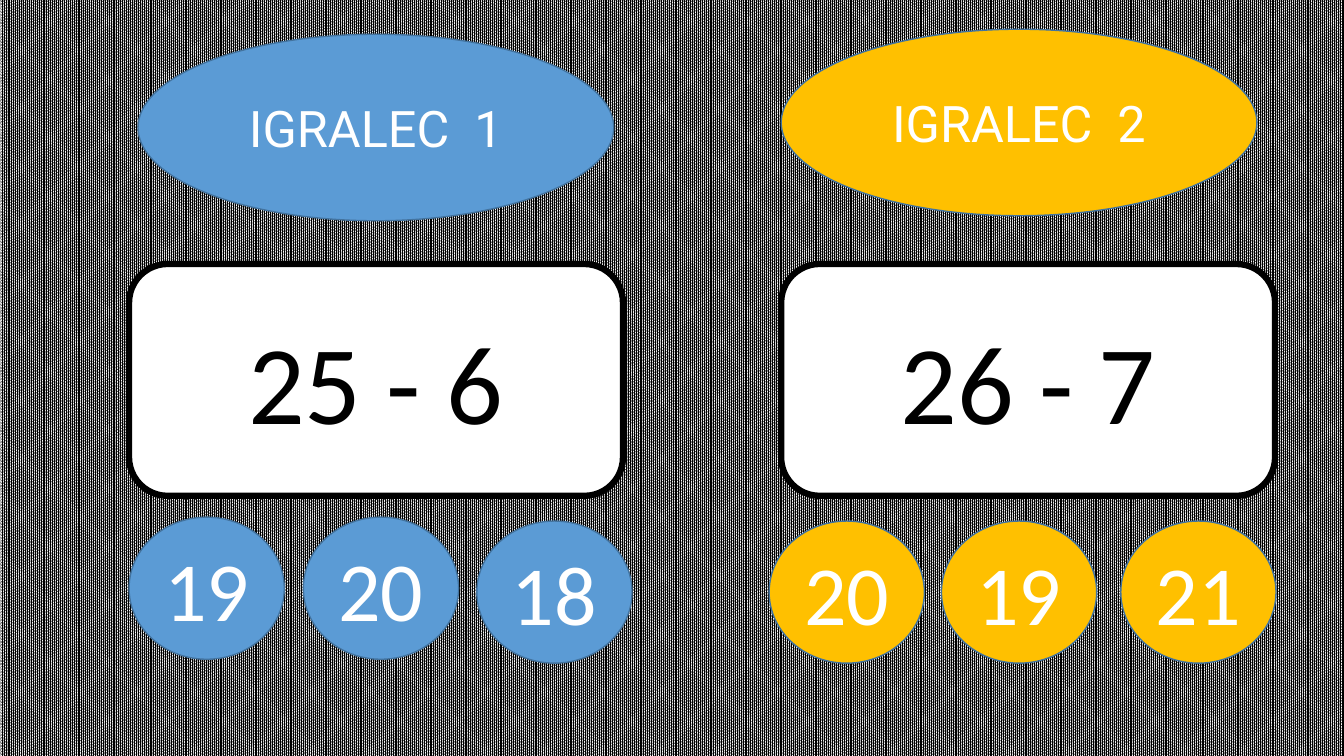
from pptx import Presentation
from pptx.dml.color import RGBColor
from pptx.enum.dml import MSO_PATTERN
from pptx.enum.shapes import MSO_SHAPE
from pptx.enum.text import MSO_ANCHOR, PP_ALIGN
from pptx.util import Pt

BLACK = RGBColor(0x00, 0x00, 0x00)
WHITE = RGBColor(0xFF, 0xFF, 0xFF)
BLUE = RGBColor(0x5B, 0x9B, 0xD5)
YELLOW = RGBColor(0xFF, 0xC0, 0x00)
OUTLINE = RGBColor(0x43, 0x73, 0x9E)

BADGE = {"name": "Roboto", "size": Pt(36)}
TASK = {"name": "Calibri", "size": Pt(80)}
ANSWER = {"name": "Calibri", "size": Pt(60)}

# Each box is left, top, width, height in points; the rest is relative to it.
PLAYERS = [
    {"box": (92.2, 188.6, 352.8, 165.6), "color": BLUE,
     "name": "IGRALEC  1", "badge_at": (6.4, -164.1), "task": "25 - 6",
     "answers": [("19", 0, 15.2), ("20", 124.5, 15.2), ("18", 248.4, 18)]},
    {"box": (558, 188.6, 352.8, 165.6), "color": YELLOW,
     "name": "IGRALEC  2", "badge_at": (0, -167.7), "task": "26 - 7",
     "answers": [("20", -8.6, 18), ("19", 114.5, 18), ("21", 242.6, 18)]},
]


def add_label(s, kind, box, text, font, fill, color=WHITE, line=OUTLINE, weight=1):
    """Add a filled shape with one centred line of text."""
    sp = s.shapes.add_shape(kind, *map(Pt, box))
    sp.shadow.inherit = False
    sp.fill.solid()
    sp.fill.fore_color.rgb = fill
    sp.line.color.rgb = line
    sp.line.width = Pt(weight)
    tf = sp.text_frame
    tf.vertical_anchor = MSO_ANCHOR.MIDDLE
    p = tf.paragraphs[0]
    p.alignment = PP_ALIGN.CENTER
    r = p.add_run()
    r.text = text
    for key, value in font.items():
        setattr(r.font, key, value)
    r.font.color.rgb = color


def add_player(s, box, color, name, badge_at, task, answers):
    """Place the task card in the box, the badge above and the answers below."""
    left, top, width, height = box
    add_label(s, MSO_SHAPE.ROUNDED_RECTANGLE, box, task, TASK, WHITE,
              color=BLACK, line=BLACK, weight=4.5)
    dx, dy = badge_at
    add_label(s, MSO_SHAPE.OVAL, (left + dx, top + dy, 339.8, 133.2),
              name, BADGE, color)
    for text, dx, gap in answers:
        add_label(s, MSO_SHAPE.OVAL, (left + dx, top + height + gap, 110.9, 101.5),
                  text, ANSWER, color)


def set_background(s):
    fill = s.background.fill
    fill.patterned()
    fill.pattern = MSO_PATTERN.PERCENT_90
    fill.fore_color.rgb = BLACK
    fill.back_color.rgb = WHITE


def main():
    prs = Presentation()
    prs.slide_width, prs.slide_height = Pt(960), Pt(540)
    s = prs.slides.add_slide(prs.slide_layouts[6])
    set_background(s)
    for player in PLAYERS:
        add_player(s, **player)
    prs.save("out.pptx")


if __name__ == "__main__":
    main()
